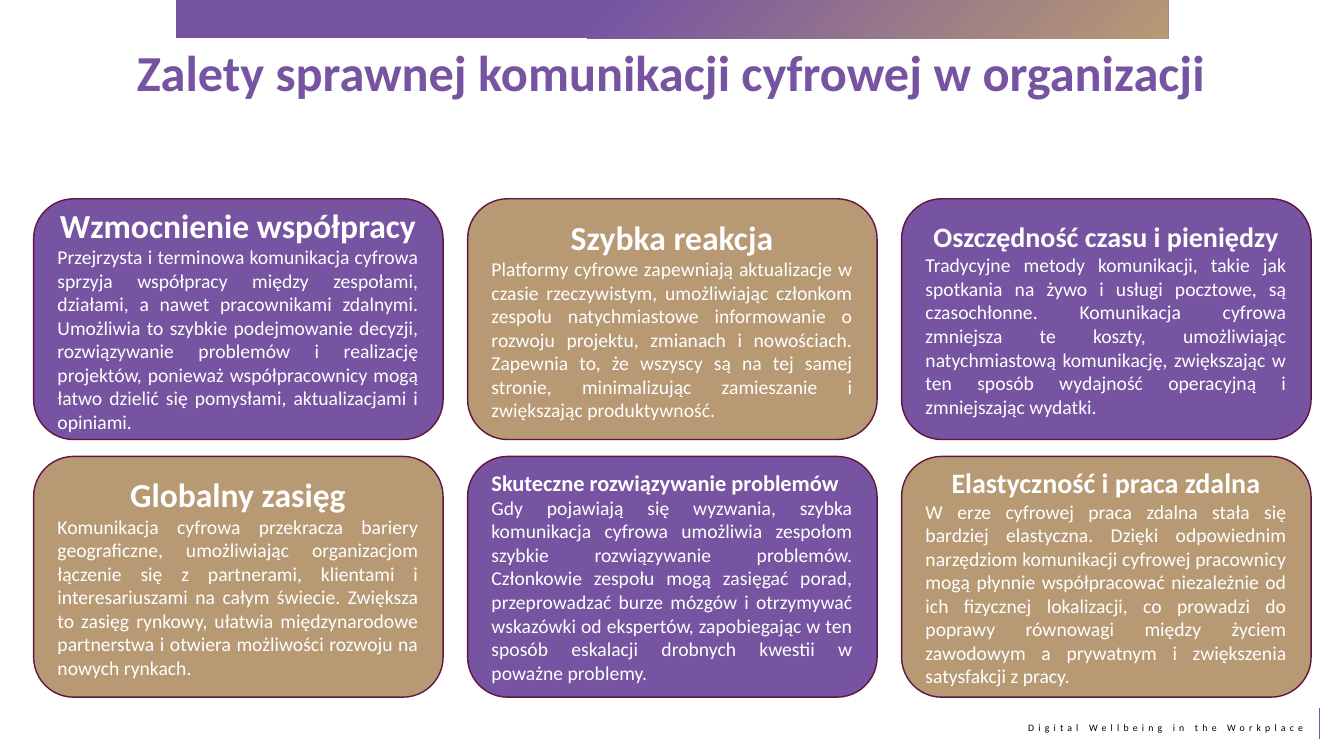
from lxml import etree
from pptx import Presentation, util as u
from pptx.dml.color import RGBColor
from pptx.enum import shapes, text
from pptx.oxml import ns

PX = 6350
COLORS = {"purple": "7654A2", "sand": "B79974", "border": "631440", "white": "FFFFFF", "black": "000000"}
ALIGN = text.PP_ALIGN

BENEFITS = [
    ("Wzmocnienie współpracy", 24, 344,
     "Przejrzysta i terminowa komunikacja cyfrowa sprzyja współpracy między zespołami, działami, a nawet "
     "pracownikami zdalnymi. Umożliwia to szybkie podejmowanie decyzji, rozwiązywanie problemów i realizację "
     "projektów, ponieważ współpracownicy mogą łatwo dzielić się pomysłami, aktualizacjami i opiniami."),
    ("Szybka reakcja", 24, 310,
     "Platformy cyfrowe zapewniają aktualizacje w czasie rzeczywistym, umożliwiając członkom zespołu "
     "natychmiastowe informowanie o rozwoju projektu, zmianach i nowościach. Zapewnia to, że wszyscy są na "
     "tej samej stronie, minimalizując zamieszanie i zwiększając produktywność."),
    ("Oszczędność czasu i pieniędzy", 20, 301,
     "Tradycyjne metody komunikacji, takie jak spotkania na żywo i usługi pocztowe, są czasochłonne. "
     "Komunikacja cyfrowa zmniejsza te koszty, umożliwiając natychmiastową komunikację, zwiększając w ten "
     "sposób wydajność operacyjną i zmniejszając wydatki."),
    ("Globalny zasięg", 24, 310,
     "Komunikacja cyfrowa przekracza bariery geograficzne, umożliwiając organizacjom łączenie się z "
     "partnerami, klientami i interesariuszami na całym świecie. Zwiększa to zasięg rynkowy, ułatwia "
     "międzynarodowe partnerstwa i otwiera możliwości rozwoju na nowych rynkach."),
    ("Skuteczne rozwiązywanie problemów", 16, 325,
     "Gdy pojawiają się wyzwania, szybka komunikacja cyfrowa umożliwia zespołom szybkie rozwiązywanie "
     "problemów. Członkowie zespołu mogą zasięgać porad, przeprowadzać burze mózgów i otrzymywać wskazówki "
     "od ekspertów, zapobiegając w ten sposób eskalacji drobnych kwestii w poważne problemy."),
    ("Elastyczność i praca zdalna", 20, 334,
     "W erze cyfrowej praca zdalna stała się bardziej elastyczna. Dzięki odpowiednim narzędziom komunikacji "
     "cyfrowej pracownicy mogą płynnie współpracować niezależnie od ich fizycznej lokalizacji, co prowadzi "
     "do poprawy równowagi między życiem zawodowym a prywatnym i zwiększenia satysfakcji z pracy."),
]


def box(*lengths):
    """Turn px lengths into EMU."""
    return [length * PX for length in lengths]


def rgb(name):
    """Look up a palette colour."""
    return RGBColor.from_string(COLORS[name])


def write(paragraph, words, size, color="white", bold=False, align=ALIGN.CENTER, spacing=None):
    """Put formatted words into a paragraph."""
    paragraph.alignment = align
    run = paragraph.add_run()
    run.text = words
    run.font.name = "Calibri"
    run.font.size = u.Pt(size)
    run.font.bold = bold
    run.font.color.rgb = rgb(color)
    if spacing:
        run.font._element.set("spc", str(spacing * 100))


def add_frame(parent, place, anchor=text.MSO_ANCHOR.TOP, grow=True):
    """Add a wrapping text box and return its text frame."""
    frame = parent.add_textbox(*box(*place)).text_frame
    frame.word_wrap = True
    frame.vertical_anchor = anchor
    frame.auto_size = text.MSO_AUTO_SIZE.SHAPE_TO_FIT_TEXT if grow else text.MSO_AUTO_SIZE.NONE
    return frame


def add_banner(slide):
    """Draw the top band with a radial gradient from its lower right corner."""
    banner = slide.shapes.add_shape(shapes.MSO_SHAPE.RECTANGLE, *box(251, 0, 1418, 55))
    banner.shadow.inherit = False
    banner.line.fill.background()
    banner.fill.gradient()
    for stop, (name, position) in zip(banner.fill.gradient_stops, [("sand", 0), ("purple", 0.58)]):
        stop.color.rgb = rgb(name)
        stop.position = position
    gradient = banner._element.spPr.find(ns.qn("a:gradFill"))
    gradient.remove(gradient.find(ns.qn("a:lin")))
    radial = etree.SubElement(gradient, ns.qn("a:path"), path="circle")
    etree.SubElement(radial, ns.qn("a:fillToRect"), l="100000", t="100000")


def add_footer(slide):
    """Add the course name and the short rule beside it."""
    course = add_frame(slide.shapes, (1394, 1024, 482, 32))
    write(course.paragraphs[0], "Digital Wellbeing in the Workplace", 7, color="black",
          align=ALIGN.RIGHT, spacing=3)
    rule = slide.shapes.add_connector(shapes.MSO_CONNECTOR.STRAIGHT, *box(1885, 1056, 1885, 1011))
    rule.line.color.rgb = rgb("purple")
    rule.line.width = u.Pt(0.75)
    etree.SubElement(rule._element.spPr, ns.qn("a:effectLst"))


def add_benefit(slide, index, heading, heading_size, text_height, description):
    """Add one card to the grid of three columns."""
    row, column = divmod(index, 3)
    left, top, width, height = 48 + 620 * column, 284 + 368 * row, 585, 344
    group = slide.shapes.add_group_shape().shapes
    card = group.add_shape(shapes.MSO_SHAPE.ROUNDED_RECTANGLE, *box(left, top, width, height))
    card.shadow.inherit = False
    card.fill.solid()
    card.fill.fore_color.rgb = rgb(("purple", "sand")[index % 2])
    card.line.color.rgb = rgb("border")
    card.line.width = u.Pt(1)
    text_top = top + (height - text_height) // 2
    frame = add_frame(group, (left + 20, text_top, 544, text_height), anchor=text.MSO_ANCHOR.MIDDLE)
    heading_align = ALIGN.JUSTIFY if heading_size == 16 else ALIGN.CENTER
    write(frame.paragraphs[0], heading, heading_size, bold=True, align=heading_align)
    write(frame.add_paragraph(), description, 14, align=ALIGN.JUSTIFY)


def main():
    """Build and save the slide."""
    deck = Presentation()
    deck.slide_width, deck.slide_height = box(1920, 1080)
    slide = deck.slides.add_slide(deck.slide_layouts[6])
    add_footer(slide)
    add_banner(slide)
    title = add_frame(slide.shapes, (134, 52, 1650, 127), grow=False)
    write(title.paragraphs[0], "Zalety sprawnej komunikacji cyfrowej w organizacji", 36,
          color="purple", bold=True)
    for index, benefit in enumerate(BENEFITS):
        add_benefit(slide, index, *benefit)
    deck.save("out.pptx")


if __name__ == "__main__":
    main()
